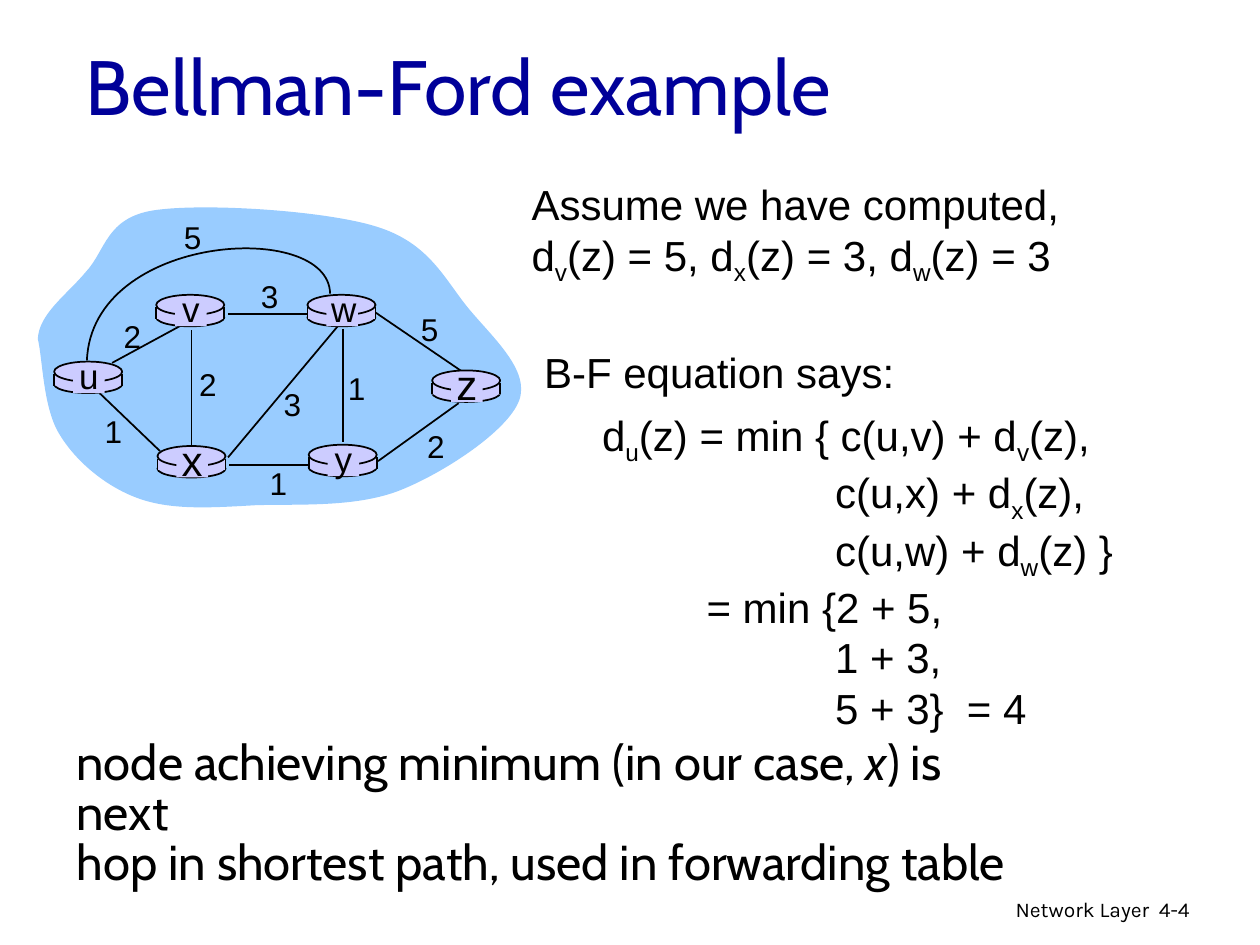
from itertools import chain

from pptx import Presentation
from pptx.dml.color import RGBColor
from pptx.enum.shapes import MSO_CONNECTOR, MSO_SHAPE
from pptx.enum.text import MSO_ANCHOR, MSO_AUTO_SIZE, PP_ALIGN
from pptx.oxml.ns import qn
from pptx.util import Inches, Pt
from lxml.etree import SubElement

BLACK, NAVY, SKY, LILAC = "000000", "000099", "99CCFF", "CCCCFF"

# Start point, then two control points and an end point for each curve
CLOUD = [(0, 1.08),
         (0.01, 0.88), (0.23, 0.73), (0.38, 0.55),
         (0.54, 0.38), (0.54, 0.12), (0.92, 0.06),
         (1.31, 0), (2.28, 0.06), (2.69, 0.19),
         (3.11, 0.32), (3.23, 0.61), (3.42, 0.84),
         (3.61, 1.07), (3.91, 1.33), (3.82, 1.57),
         (3.73, 1.81), (3.23, 2.14), (2.88, 2.28),
         (2.53, 2.42), (2.07, 2.39), (1.73, 2.4),
         (1.38, 2.42), (1.07, 2.44), (0.81, 2.35),
         (0.55, 2.26), (0.31, 2.06), (0.18, 1.85),
         (0.04, 1.64), (0.04, 1.24), (0, 1.08)]
ARC_U_W = [(2.32, 0.72), (2.31, 0.13), (0.43, 0.24), (0.39, 1.25)]
LINKS = [((0.59, 1.27), (1.18, 0.95)), ((2.42, 1), (2.42, 1.9)),
         ((1.22, 1.01), (1.22, 1.94)), ((1.51, 2.02), (2.38, 0.98)),
         ((2.7, 2.05), (3.34, 1.59)), ((2.15, 2.08), (1.52, 2.08)),
         ((0.97, 1.97), (0.49, 1.51)), ((2.14, 0.88), (1.51, 0.88)),
         ((3.37, 1.34), (2.68, 0.87))]
COSTS = [("2", 0.58, 0.86), ("2", 1.18, 1.24), ("1", 0.43, 1.61),
         ("3", 1.85, 1.4), ("1", 1.74, 2.02), ("1", 2.36, 1.27),
         ("2", 2.99, 1.73), ("5", 2.94, 0.8), ("3", 1.67, 0.54),
         ("5", 1.06, 0.07)]
ROUTERS = [("u", 0.13, 1.26, 20), ("x", 0.95, 1.93, 24), ("v", 0.94, 0.73, 20),
           ("w", 2.14, 0.73, 20), ("y", 2.15, 1.92, 20), ("z", 3.13, 1.33, 24)]


def color(hex_string):
    return RGBColor.from_string(hex_string)


def paint(shape, fill=None, line=None):
    shape.shadow.inherit = False
    if fill:
        shape.fill.solid()
        shape.fill.fore_color.rgb = color(fill)
    else:
        shape.fill.background()
    if line:
        shape.line.color.rgb = color(line)
        shape.line.width = Pt(1)
    else:
        shape.line.fill.background()


def add_span(para, text, size, font, ink=BLACK, style=None):
    span = para.add_run()
    span.text = text
    span.font.size = Pt(size)
    span.font.name = font
    span.font.color.rgb = color(ink)
    if style == "italic":
        span.font.italic = True
    elif style == "sub":
        span.font._element.set("baseline", "-25000")


def formula(text):
    """Split into spans; the letter after each underscore is a subscript."""
    first, *rest = text.split("_")
    return [(first, None)] + list(chain.from_iterable(
        [(part[0], "sub"), (part[1:], None)] for part in rest))


def add_text(shapes, box, lines, size, font="Arial", align=PP_ALIGN.LEFT, wrap=False):
    """Add a text box; each line is a list of (text, style) spans."""
    frame = shapes.add_textbox(*map(Inches, box)).text_frame
    frame.word_wrap = wrap
    for number, spans in enumerate(lines):
        para = frame.add_paragraph() if number else frame.paragraphs[0]
        para.alignment = align
        for text, style in spans:
            add_span(para, text, size, font, style=style)
    return frame


def add_line(shapes, start, end):
    line = shapes.add_connector(MSO_CONNECTOR.STRAIGHT, *map(Inches, (*start, *end)))
    line.line.color.rgb = color(BLACK)
    line.line.width = Pt(1)
    SubElement(line._element.spPr, qn("a:effectLst"))


def add_curve(shapes, points, fill=None, line=None):
    """Draw a freeform, turning each three segments into one Bezier curve."""
    start, *rest = [(Inches(x), Inches(y)) for x, y in points]
    builder = shapes.build_freeform(*start)
    builder.add_line_segments(rest, close=False)
    shape = builder.convert_to_shape()
    outline = next(shape._element.iter(qn("a:path")))
    segments = outline.findall(qn("a:lnTo"))
    for first in range(0, len(segments), 3):
        bezier = SubElement(outline, qn("a:cubicBezTo"))
        for segment in segments[first:first + 3]:
            bezier.append(segment[0])
            outline.remove(segment)
    paint(shape, fill, line)


def router(shapes, left, top, letter, size):
    width = 0.54

    def part(kind, x, y, w, h, line=None):
        box = map(Inches, (left + x, top + y, w, h))
        paint(shapes.add_shape(kind, *box), LILAC, line)

    part(MSO_SHAPE.OVAL, 0, 0.11, width, 0.14, BLACK)
    part(MSO_SHAPE.RECTANGLE, 0, 0.1, width, 0.09)
    for side in (left, left + width):
        add_line(shapes, (side, top + 0.1), (side, top + 0.19))
    part(MSO_SHAPE.OVAL, 0, 0, width, 0.16, BLACK)
    part(MSO_SHAPE.RECTANGLE, 0.15, 0.02, 0.25, 0.23)
    height = 0.5 if size == 24 else 0.43
    add_text(shapes, (left + 0.09, top + 0.11 - height / 2, 0.37, height),
             [[(letter, None)]], size, align=PP_ALIGN.CENTER)


def network(page, left, top):
    shapes = page.shapes.add_group_shape().shapes

    def place(points):
        return [(left + x, top + y) for x, y in points]

    add_curve(shapes, place(CLOUD), fill=SKY)
    for link in LINKS:
        add_line(shapes, *place(link))
    add_curve(shapes, place(ARC_U_W), line=BLACK)
    for letter, x, y, size in ROUTERS:
        router(shapes, left + x, top + y, letter, size)
    for cost, x, y in COSTS:
        add_text(shapes, (left + x, top + y, 0.34, 0.4), [[(cost, None)]], 18,
                 align=PP_ALIGN.CENTER)


def title(page, box):
    shape = page.shapes.title
    shape.left, shape.top, shape.width, shape.height = map(Inches, box)
    frame = shape.text_frame
    frame.auto_size = MSO_AUTO_SIZE.NONE
    frame.vertical_anchor = MSO_ANCHOR.MIDDLE
    para = frame.paragraphs[0]
    para.alignment = PP_ALIGN.LEFT
    add_span(para, "Bellman-Ford example", 44, "Cabin", NAVY)


def derivation(page, left, top):
    add_text(page.shapes, (left, top, 5.32, 0.91),
             [formula("Assume we have computed,"),
              formula("d_v(z) = 5, d_x(z) = 3, d_w(z) = 3")], 24, wrap=True)
    add_text(page.shapes, (left + 0.1, top + 1.33, 2.98, 0.5),
             [formula("B-F equation says:")], 24)
    steps = [("d_u(z) = min { c(u,v) + d_v(z),", 0), ("c(u,x) + d_x(z),", 1.85),
             ("c(u,w) + d_w(z) }", 1.85), ("= min {2 + 5,", 0.83),
             ("1 + 3,", 1.85), ("5 + 3}  = 4", 1.85)]
    frame = add_text(page.shapes, (left + 0.56, top + 1.83, 4.6, 2.5),
                     [formula(text) for text, _ in steps], 24, wrap=True)
    for para, (_, indent) in zip(frame.paragraphs, steps):
        properties = para._p.get_or_add_pPr()
        properties.set("marL", str(Inches(indent)))
        properties.set("indent", "0")


def conclusion(page, box):
    frame = add_text(page.shapes, box, [
        [("node achieving minimum (in our case, ", None), ("x", "italic"),
         (") is next", None)],
        [("hop in shortest path, used in forwarding table", None)]],
        28, "Cabin", wrap=True)
    for para in frame.paragraphs:
        para.line_spacing = 0.85


def footer(page, left, top):
    add_text(page.shapes, (left, top, 3.17, 0.3), [[("Network Layer", None)]],
             12, "Karla", PP_ALIGN.RIGHT, True)
    add_text(page.shapes, (left + 3.05, top, 0.74, 0.3), [[("4-4", None)]],
             12, "Karla", wrap=True)


def main():
    deck = Presentation()
    deck.slide_width, deck.slide_height = Inches(10), Inches(7.5)
    page = deck.slides.add_slide(deck.slide_layouts[5])
    title(page, (0.58, 0.19, 8.5, 0.96))
    network(page, 0.3, 1.61)
    derivation(page, 4.12, 1.37)
    conclusion(page, (0.51, 5.83, 7.75, 0.9))
    footer(page, 6.05, 7.07)
    deck.save("out.pptx")


if __name__ == "__main__":
    main()
